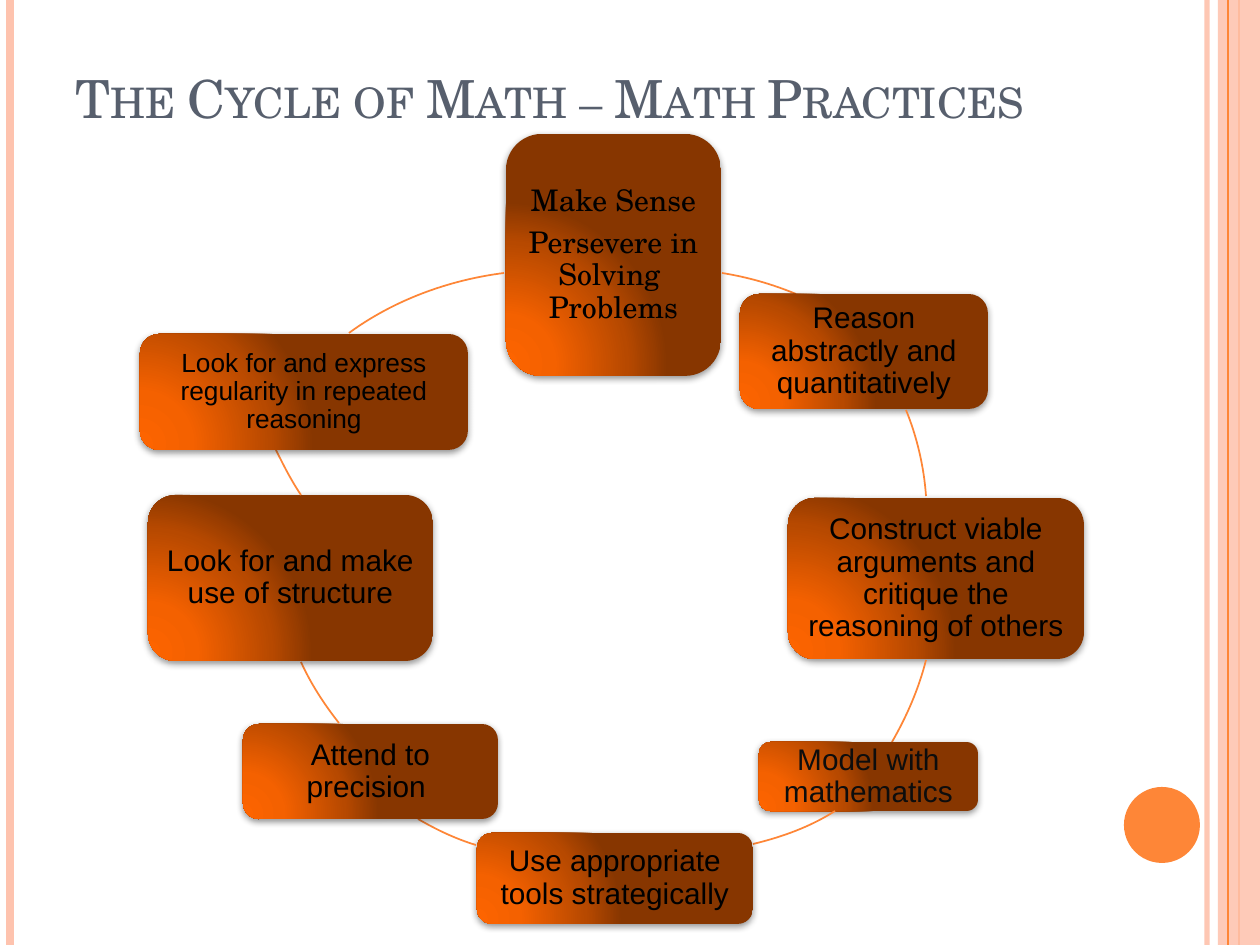
from lxml import etree
from pptx import Presentation
from pptx.dml.color import RGBColor
from pptx.enum.shapes import MSO_CONNECTOR, MSO_SHAPE
from pptx.enum.text import MSO_ANCHOR, PP_ALIGN
from pptx.oxml import parse_xml
from pptx.oxml.ns import qn
from pptx.util import Pt

STRAIGHT = MSO_CONNECTOR.STRAIGHT
RECTANGLE, ROUNDED, OVAL = MSO_SHAPE.RECTANGLE, MSO_SHAPE.ROUNDED_RECTANGLE, MSO_SHAPE.OVAL
MIDDLE, BOTTOM = MSO_ANCHOR.MIDDLE, MSO_ANCHOR.BOTTOM
CENTER = PP_ALIGN.CENTER

ORANGE = RGBColor(0xFE, 0x86, 0x37)
PEACH = RGBColor(0xFE, 0xC3, 0xAE)
SLATE = RGBColor(0x57, 0x5F, 0x6D)
BLACK = RGBColor(0, 0, 0)
NEAR_BLACK = RGBColor(0x0D, 0x0D, 0x0D)
SERIF, SANS = "TeX Gyre Schola", "Arial"
NAMESPACE = "http://schemas.openxmlformats.org/drawingml/2006/main"

SCALE = 914400 / 126  # EMU per px
PAGE_WIDTH, PAGE_HEIGHT = 1260, 945

TITLE = "The Cycle of Math – Math Practices"
TITLE_AREA = (63, 37, 1029, 98)

# Vertical stripes: x, colour, width in points, opacity in percent
STRIPES_BEHIND = [(1207, PEACH, 3, 93), (10, PEACH, 4.5, 100), (1239, ORANGE, 1.5, 100)]
STRIPES_FRONT = [(1228, ORANGE, 0.75, 100)]
SIDE_BAND = (1218, 0, 42, PAGE_HEIGHT)
DISC = (1124, 787, 76, 76)

# Practices clockwise: paragraphs, area, font, size, colour,
# then the corner of the next arc's circle and the arc's control points
PRACTICES = [
    (["Make Sense", "Persevere in Solving  Problems"], (506, 134, 215, 242), SERIF, 17, BLACK,
     (353, 271), [(722, 273), (747, 277), (772, 284), (796, 294)]),
    (["Reason abstractly and quantitatively"], (740, 294, 248, 115), SANS, 17, BLACK,
     (281, 200), [(906, 410), (917, 437), (924, 467), (926, 496)]),
    (["Construct viable arguments and critique the reasoning of others"],
     (788, 498, 296, 161), SANS, 17, BLACK,
     (290, 255), [(926, 660), (919, 688), (907, 716), (892, 742)]),
    (["Model with mathematics"], (759, 742, 219, 69), SANS, 17, NEAR_BLACK,
     (355, 207), [(835, 811), (810, 827), (782, 837), (753, 844)]),
    (["Use appropriate tools strategically"], (477, 833, 276, 91), SANS, 17, BLACK,
     (257, 217), [(476, 845), (456, 839), (437, 830), (418, 819)]),
    (["Attend to precision "], (243, 724, 255, 95), SANS, 17, BLACK,
     (271, 202), [(339, 723), (324, 704), (311, 684), (301, 662)]),
    (["Look for and make use of structure"], (148, 495, 285, 166), SANS, 17, BLACK,
     (248, -5), [(301, 495), (291, 480), (284, 466), (276, 450)]),
    (["Look for and express regularity in repeated reasoning"],
     (140, 334, 328, 116), SANS, 15, BLACK,
     (215, 272), [(349, 333), (394, 300), (449, 280), (504, 273)]),
]
CIRCLE_SIZE = 646

GRADIENT_STOPS = [(0, "FD6400"), (30, "F46100"), (75, "B74900"), (100, "873600")]
GRADIENT = (
    f'<a:gradFill xmlns:a="{NAMESPACE}" rotWithShape="1"><a:gsLst>'
    + "".join(f'<a:gs pos="{stop * 1000}"><a:srgbClr val="{color}"/></a:gs>'
              for stop, color in GRADIENT_STOPS)
    + '</a:gsLst><a:path path="circle">'
    '<a:fillToRect l="5000" t="100000" r="120000" b="10000"/></a:path></a:gradFill>'
)
SHADOW = (
    f'<a:outerShdw xmlns:a="{NAMESPACE}" blurRad="50800" dist="20320" dir="5400000" '
    'rotWithShape="0"><a:srgbClr val="000000"><a:alpha val="42000"/></a:srgbClr></a:outerShdw>'
)


def emu(*lengths):
    return [round(length * SCALE) for length in lengths]


def set_opacity(element, percent):
    if percent < 100:
        color = element.find(".//" + qn("a:srgbClr"))
        etree.SubElement(color, qn("a:alpha")).set("val", str(percent * 1000))


def add_shape(page, kind, area):
    shape = page.shapes.add_shape(kind, *emu(*area))
    shape.shadow.inherit = False
    shape.line.fill.background()
    return shape


def add_stripe(page, x, color, width, opacity):
    stripe = page.shapes.add_connector(STRAIGHT, *emu(x, 0, x, PAGE_HEIGHT))
    stripe.line.color.rgb = color
    stripe.line.width = Pt(width)
    properties = stripe._element.spPr
    set_opacity(properties, opacity)
    etree.SubElement(properties, qn("a:effectLst"))


def add_span(para, text, font, size, color):
    span = para.add_run()
    span.text = text
    span.font.name = font
    span.font.size = Pt(size)
    span.font.color.rgb = color
    return span


def add_practice(page, lines, area, font, size, color):
    box = add_shape(page, ROUNDED, area)
    properties = box._element.spPr
    properties.find(qn("a:prstGeom")).addnext(parse_xml(GRADIENT))
    properties.find(qn("a:effectLst")).append(parse_xml(SHADOW))
    frame = box.text_frame
    frame.word_wrap = True
    frame.vertical_anchor = MIDDLE
    inset = emu(9 if size == 17 else 8)[0]
    frame.margin_left = frame.margin_right = frame.margin_top = frame.margin_bottom = inset
    for index, line in enumerate(lines):
        para = frame.add_paragraph() if index else frame.paragraphs[0]
        para.alignment = CENTER
        para.line_spacing = 0.9
        if index:
            para.space_before = Pt(6)
        add_span(para, line, font, size, color)


def add_arc(page, corner, controls):
    builder = page.shapes.build_freeform(*emu(*controls[0]))
    builder.add_line_segments([emu(*controls[-1])], close=False)
    arc = builder.convert_to_shape()
    arc.shadow.inherit = False
    arc.fill.background()
    arc.line.color.rgb = ORANGE
    arc.line.width = Pt(1)

    # The frame is the whole circle; the outline is one curve inside it
    arc.left, arc.top, arc.width, arc.height = emu(*corner, CIRCLE_SIZE, CIRCLE_SIZE)
    outline = arc._element.spPr.find(".//" + qn("a:path"))
    for child in list(outline):
        outline.remove(child)
    for side in ("w", "h"):
        outline.set(side, str(arc.width))
    for tag, points in (("a:moveTo", controls[:1]), ("a:cubicBezTo", controls[1:])):
        step = etree.SubElement(outline, qn(tag))
        for point in points:
            x, y = emu(point[0] - corner[0], point[1] - corner[1])
            etree.SubElement(step, qn("a:pt"), x=str(x), y=str(y))


def main():
    deck = Presentation()
    deck.slide_width, deck.slide_height = emu(PAGE_WIDTH, PAGE_HEIGHT)
    page = deck.slides.add_slide(deck.slide_layouts[6])

    # Side decoration
    for stripe in STRIPES_BEHIND:
        add_stripe(page, *stripe)
    band = add_shape(page, RECTANGLE, SIDE_BAND)
    band.fill.solid()
    band.fill.fore_color.rgb = PEACH
    set_opacity(band._element.spPr, 87)
    for stripe in STRIPES_FRONT:
        add_stripe(page, *stripe)
    disc = add_shape(page, OVAL, DISC)
    disc.fill.solid()
    disc.fill.fore_color.rgb = ORANGE

    # Title in small capitals
    frame = page.shapes.add_textbox(*emu(*TITLE_AREA)).text_frame
    frame.word_wrap = True
    frame.vertical_anchor = BOTTOM
    span = add_span(frame.paragraphs[0], TITLE, SERIF, 30, SLATE)
    span._r.get_or_add_rPr().set("cap", "small")

    # Cycle of practices
    for *practice, corner, controls in PRACTICES:
        add_practice(page, *practice)
        add_arc(page, corner, controls)

    deck.save("out.pptx")


if __name__ == "__main__":
    main()
